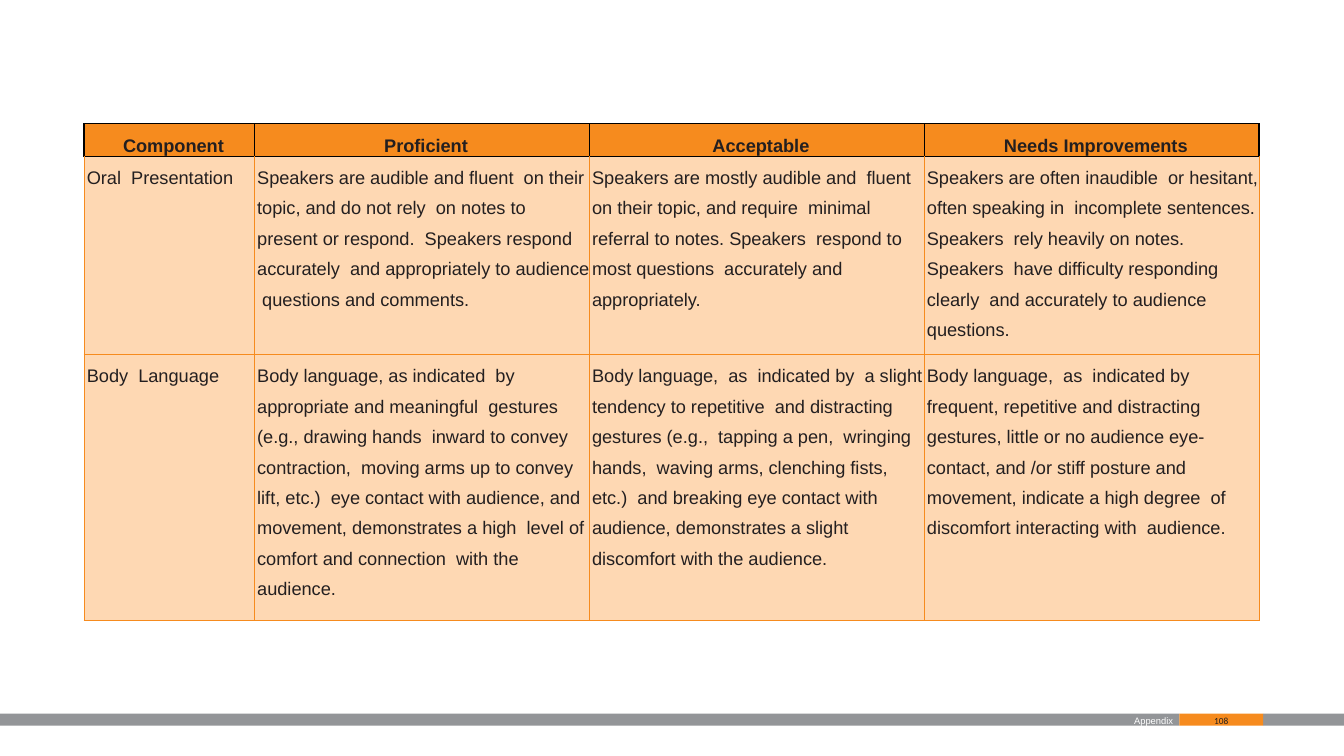
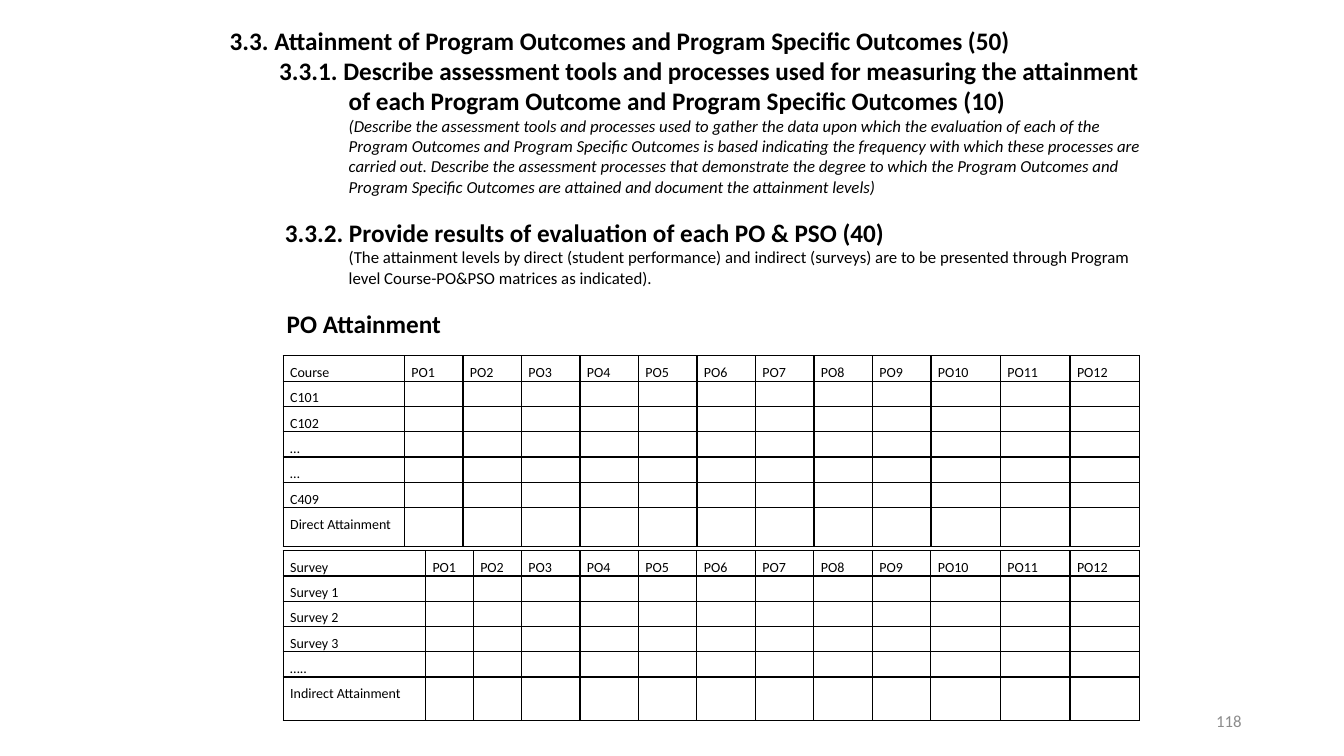
from dataclasses import dataclass, replace
from typing import Optional

from lxml.etree import SubElement
from pptx import Presentation
from pptx.dml.color import RGBColor
from pptx.enum.shapes import MSO_SHAPE as Preset
from pptx.enum.text import MSO_ANCHOR as Anchor, MSO_AUTO_SIZE as AutoSize, PP_ALIGN as Align
from pptx.oxml.ns import qn
from pptx.util import Pt

# Shared colours and measures, in points
ORANGE, PEACH, GREY, INK = "F68B1E", "FED8B3", "939598", "231F20"
BLACK, WHITE, PALE = "000000", "FFFFFF", "8C8C8C"
SLIDE_W, SLIDE_H = 960, 540
BAND_TOP, BAND_H = 509.8, 8.6
NUMBER_LEFT, NUMBER_RIGHT = 842.4, 902.2


@dataclass(frozen=True)
class Style:
    size: float
    font: str = "Calibri"
    color: str = BLACK
    bold: bool = False
    italic: bool = False
    align: Align = Align.LEFT
    left: float = 0
    first: float = 0
    spacing: Optional[float] = None
    before: float = 0


@dataclass(frozen=True)
class Box:
    left: float
    top: float
    width: float
    height: float


@dataclass(frozen=True)
class CellLook:
    style: Style
    margins: tuple[float, float, float, float]  # left, top, right, bottom
    borders: tuple[str, str, str, str]  # left, right, top, bottom
    line: float = 1
    fill: Optional[str] = None
    anchor: Anchor = Anchor.TOP


@dataclass(frozen=True)
class Grid:
    box: Box
    columns: list[float]
    heights: list[float]
    rows: list[list[str]]
    looks: list[CellLook]  # one for each row


def rgb(color: str) -> RGBColor:
    return RGBColor.from_string(color)


def write(paragraph, text: str, style: Style) -> None:
    paragraph.alignment = style.align
    paragraph.line_spacing = style.spacing
    paragraph.space_before = Pt(style.before)
    properties = paragraph._p.get_or_add_pPr()
    properties.set("marL", str(Pt(style.left)))
    properties.set("indent", str(Pt(style.first)))
    if not text:  # keeps an empty cell as low as a filled one
        SubElement(paragraph._p, qn("a:endParaRPr"), sz=str(round(style.size * 100)))
        return
    paragraph.text = text
    for run in paragraph.runs:
        run.font.size = Pt(style.size)
        run.font.name = style.font
        run.font.bold = style.bold
        run.font.italic = style.italic
        run.font.color.rgb = rgb(style.color)


def set_margins(target, margins: tuple[float, float, float, float]) -> None:
    for side, margin in zip(("left", "top", "right", "bottom"), margins):
        setattr(target, f"margin_{side}", Pt(margin))


def add_text(slide, box: Box, lines: list[tuple[str, Style]],
             margins=(0, 0, 0, 0), anchor: Anchor = Anchor.TOP, grow: bool = False) -> None:
    frame = slide.shapes.add_textbox(
        Pt(box.left), Pt(box.top), Pt(box.width), Pt(box.height)).text_frame
    frame.word_wrap = True
    frame.auto_size = AutoSize.SHAPE_TO_FIT_TEXT if grow else AutoSize.NONE
    frame.vertical_anchor = anchor
    set_margins(frame, margins)
    for index, (text, style) in enumerate(lines):
        write(frame.add_paragraph() if index else frame.paragraphs[0], text, style)


def add_band(slide, left: float, right: float, color: str) -> None:
    band = slide.shapes.add_shape(
        Preset.RECTANGLE, Pt(left), Pt(BAND_TOP), Pt(right - left), Pt(BAND_H))
    band.shadow.inherit = False
    band.fill.solid()
    band.fill.fore_color.rgb = rgb(color)
    band.line.fill.background()


def dress_cell(cell, look: CellLook) -> None:
    set_margins(cell, look.margins)
    cell.vertical_anchor = look.anchor
    if look.fill:
        cell.fill.solid()
        cell.fill.fore_color.rgb = rgb(look.fill)
    else:
        cell.fill.background()
    properties = cell._tc.get_or_add_tcPr()
    for index, (side, color) in enumerate(zip("LRTB", look.borders)):
        line = SubElement(properties, qn(f"a:ln{side}"), w=str(Pt(look.line)))
        SubElement(SubElement(line, qn("a:solidFill")), qn("a:srgbClr"), val=color)
        properties.insert(index, line)  # borders come before the fill


def add_grid(slide, grid: Grid) -> None:
    box = grid.box
    table = slide.shapes.add_table(
        len(grid.rows), len(grid.columns),
        Pt(box.left), Pt(box.top), Pt(box.width), Pt(box.height)).table
    table.first_row = table.horz_banding = False
    for column, width in zip(table.columns, grid.columns):
        column.width = Pt(width)
    for row, height, texts, look in zip(table.rows, grid.heights, grid.rows, grid.looks):
        row.height = Pt(height)
        for cell, text in zip(row.cells, texts):
            dress_cell(cell, look)
            write(cell.text_frame.paragraphs[0], text, look.style)


# Slide 1: rubric
RUBRIC = [
    ["Component", "Proficient", "Acceptable", "Needs Improvements"],
    ["Oral  Presentation",
     "Speakers are audible and fluent  on their topic, and do not rely  on notes to present or "
     "respond.  Speakers respond accurately  and appropriately to audience  questions and comments.",
     "Speakers are mostly audible and  fluent on their topic, and require  minimal referral to "
     "notes. Speakers  respond to most questions  accurately and appropriately.",
     "Speakers are often inaudible  or hesitant, often speaking in  incomplete sentences. Speakers  "
     "rely heavily on notes. Speakers  have difficulty responding clearly  and accurately to "
     "audience  questions."],
    ["Body  Language",
     "Body language, as indicated  by appropriate and meaningful  gestures (e.g., drawing hands  "
     "inward to convey contraction,  moving arms up to convey lift, etc.)  eye contact with "
     "audience, and  movement, demonstrates a high  level of comfort and connection  with the "
     "audience.",
     "Body language,  as  indicated by  a slight tendency to repetitive  and distracting gestures "
     "(e.g.,  tapping a pen,  wringing hands,  waving arms, clenching fists, etc.)  and breaking "
     "eye contact with  audience, demonstrates a slight  discomfort with the audience.",
     "Body language,  as  indicated by  frequent, repetitive and distracting  gestures, little or "
     "no audience eye-  contact, and /or stiff posture and  movement, indicate a high degree  of "
     "discomfort interacting with  audience."],
]


def build_rubric(slide) -> None:
    # Footer bands
    add_band(slide, 0, NUMBER_LEFT, GREY)
    add_band(slide, NUMBER_RIGHT, SLIDE_W, GREY)
    add_band(slide, NUMBER_LEFT, NUMBER_RIGHT, ORANGE)
    number = Style(6.7, color=INK, align=Align.CENTER, spacing=1.14)
    add_text(slide, Box(NUMBER_LEFT, BAND_TOP, NUMBER_RIGHT - NUMBER_LEFT, BAND_H),
             [("108", number)], anchor=Anchor.MIDDLE)

    # Rubric table
    body = Style(13, "Arial", INK, left=2, spacing=1.5)
    heading = replace(body, bold=True, align=Align.CENTER, left=6)
    header = CellLook(heading, (0, 1.4, 0, 0), (BLACK,) * 4, 1, ORANGE, Anchor.MIDDLE)
    last = CellLook(body, (0, 0.9, 0, 0), (ORANGE,) * 4, 0.75, PEACH)
    upper = replace(last, borders=(ORANGE, ORANGE, BLACK, ORANGE))
    add_grid(slide, Grid(Box(60, 88.4, 839.3, 354.2), [121.7] + [239.2] * 3,
                         [22.3, 141.8, 190.1], RUBRIC, [header, upper, last]))

    # Section label
    label = Style(6.7, "Arial", WHITE, align=Align.RIGHT, left=1.4)
    add_text(slide, Box(778.3, BAND_TOP, 59.8, BAND_H), [("Appendix", label)],
             (0, 1.4, 0, 0), Anchor.MIDDLE)


# Slide 2: programme outcomes
OUTCOMES = [f"PO{number}" for number in range(1, 13)]
TEXT_MARGINS = (7.2, 3.6, 7.2, 3.6)


def add_attainment(slide, top: float, first_columns: list[float],
                   heights: list[float], labels: list[str]) -> None:
    columns = first_columns + [41.8] * 7 + [49.7] * 3
    rows = [[labels[0], *OUTCOMES]]
    rows += [[label] + [""] * len(OUTCOMES) for label in labels[1:]]
    look = CellLook(Style(10, spacing=1.5, before=6), (5, 0, 5, 0), (BLACK,) * 4)
    add_grid(slide, Grid(Box(202.3, top, sum(columns), sum(heights)),
                         columns, heights, rows, [look] * len(rows)))


def build_outcomes(slide) -> None:
    # Headings and explanations
    title = Style(18, bold=True)
    note = Style(12, left=85)
    add_text(slide, Box(157, 14.4, 668.9, 232.6), [
        ("3.3. Attainment of Program Outcomes and Program Specific Outcomes (50)", title),
        ("3.3.1. Describe assessment tools and processes used for measuring the attainment of each "
         "Program Outcome and Program Specific Outcomes (10)", replace(title, left=85, first=-49.7)),
        ("(Describe the assessment tools and processes used to gather the data upon which the "
         "evaluation of each of the Program Outcomes and Program Specific Outcomes is based "
         "indicating the frequency with which these processes are carried out. Describe the "
         "assessment processes that demonstrate the degree to which the Program Outcomes and "
         "Program Specific Outcomes are attained and document the attainment levels)",
         replace(note, italic=True)),
        ("3.3.2. Provide results of evaluation of each PO & PSO (40)",
         replace(title, left=39.4, before=14.6)),
        ("(The attainment levels by direct (student performance) and indirect (surveys) are to be "
         "presented through Program level Course-PO&PSO matrices as indicated).", note),
        ("PO Attainment", replace(title, left=40.7, before=14.6)),
    ], TEXT_MARGINS, grow=True)

    # Direct and indirect attainment
    add_attainment(slide, 254.2, [86.6, 41.8, 41.8], [15.1] * 6 + [28.1],
                   ["Course", "C101", "C102", "…", "…", "C409", "Direct Attainment"])
    add_attainment(slide, 393.3, [101.7, 34.1, 34.4], [16.6] * 5 + [31],
                   ["Survey", "Survey 1", "Survey 2", "Survey 3", "…..", "Indirect Attainment"])

    # Page number
    add_text(slide, Box(678, 500.5, 216, 28.8),
             [("118", Style(12, color=PALE, align=Align.RIGHT))], TEXT_MARGINS, Anchor.MIDDLE)


def main() -> None:
    deck = Presentation()
    deck.slide_width, deck.slide_height = Pt(SLIDE_W), Pt(SLIDE_H)
    blank = deck.slide_layouts[6]
    for build in (build_rubric, build_outcomes):
        build(deck.slides.add_slide(blank))
    deck.save("out.pptx")


if __name__ == "__main__":
    main()
